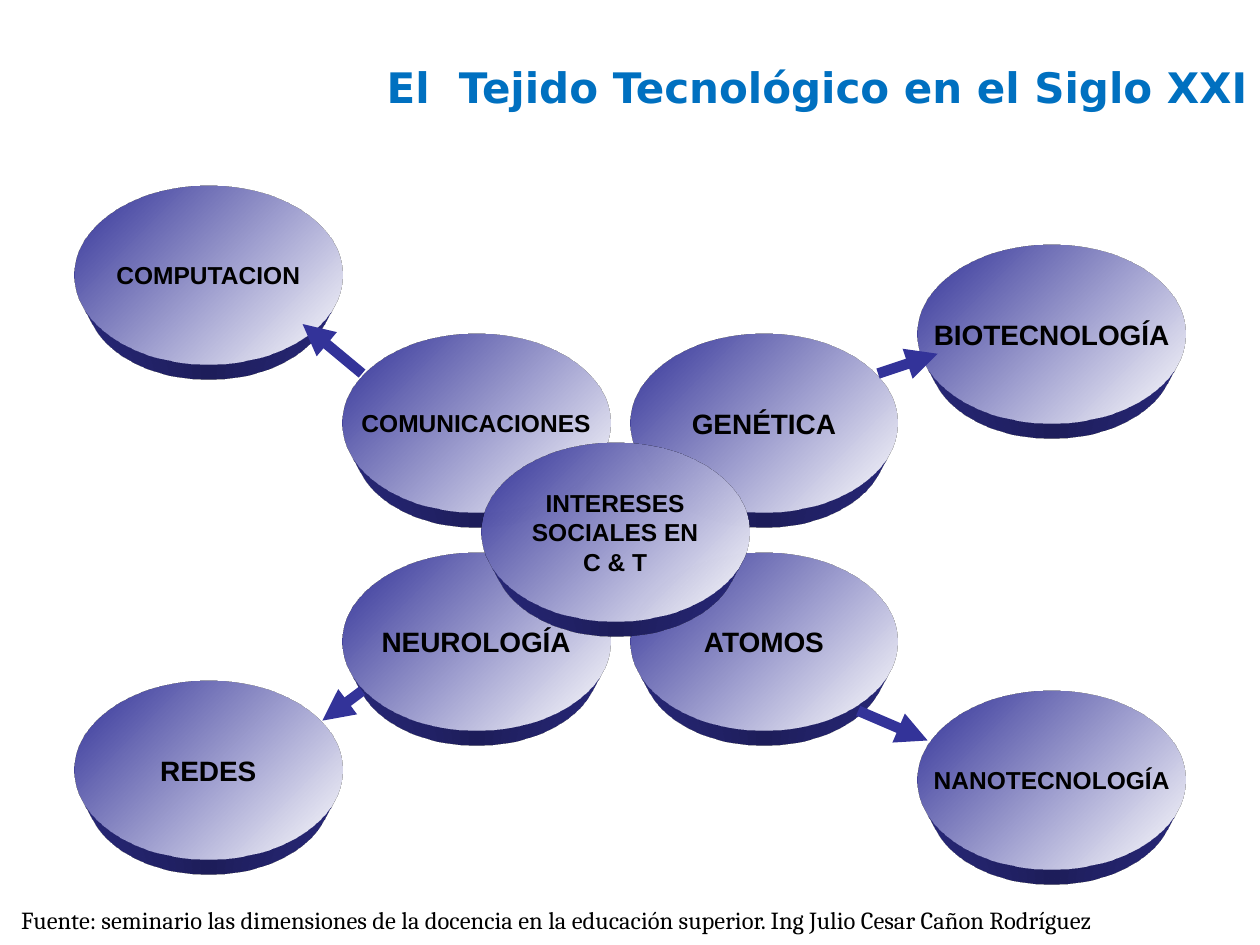
from lxml import etree
from pptx import Presentation
from pptx.dml.color import RGBColor
from pptx.enum.shapes import MSO_CONNECTOR, MSO_SHAPE
from pptx.enum.text import MSO_ANCHOR, PP_ALIGN
from pptx.oxml import parse_xml
from pptx.oxml.ns import nsdecls, qn
from pptx.util import Inches, Pt

INDIGO, WHITE, BLACK, BLUE = "333399", "FFFFFF", "000000", "0070C0"
COLUMNS, ROWS = 112, 69          # grid of the diagram
NODE_COLUMNS, NODE_ROWS = 27, 18  # size of one ellipse

# column, row, font size, lines; from back to front
NODES = [
    (27, 37, 16, ["NEUROLOGÍA"]),
    (56, 37, 16, ["ATOMOS"]),
    (27, 15, 14, ["COMUNICACIONES"]),
    (56, 15, 16, ["GENÉTICA"]),
    (41, 26, 14, ["INTERESES", "SOCIALES EN", "C & T"]),
    (0, 50, 16, ["REDES"]),
    (85, 51, 14, ["NANOTECNOLOGÍA"]),
    (0, 0, 14, ["COMPUTACION"]),
    (85, 6, 16, ["BIOTECNOLOGÍA"]),
]
# start column and row, end column and row
ARROWS = [(81, 19, 87, 17), (29, 19, 23, 14), (29, 51, 25, 54), (79, 53, 86, 56)]

SCENE = f"""<a:scene3d {nsdecls('a')}>
  <a:camera prst="legacyPerspectiveBottom"/><a:lightRig rig="legacyFlat3" dir="t"/>
</a:scene3d>"""
EXTRUSION = f"""<a:sp3d {nsdecls('a')} extrusionH="887400" prstMaterial="legacyMatte">
  <a:bevelT w="13500" h="13500" prst="angle"/><a:bevelB w="13500" h="13500" prst="angle"/>
  <a:extrusionClr><a:srgbClr val="{INDIGO}"/></a:extrusionClr>
</a:sp3d>"""


def color(value):
    return RGBColor.from_string(value)


def write(text_frame, lines, font_name, size, ink, bold=False, align=PP_ALIGN.LEFT):
    for index, line in enumerate(lines):
        paragraph = text_frame.paragraphs[0] if index == 0 else text_frame.add_paragraph()
        paragraph.text = line
        paragraph.alignment = align
        font = paragraph.font
        font.name, font.size, font.bold = font_name, Pt(size), bold
        font.color.rgb = color(ink)


def add_node(slide, left, top, width, height, size, lines):
    """Add an extruded ellipse with its label."""
    shape = slide.shapes.add_shape(MSO_SHAPE.OVAL, left, top, width, height)
    shape.shadow.inherit = False
    shape.line.fill.background()
    shape.fill.gradient()
    shape.fill.gradient_angle = 315
    for stop, position, value in zip(shape.fill.gradient_stops, (0, 1), (INDIGO, WHITE)):
        stop.position = position
        stop.color.rgb = color(value)
    for block in (SCENE, EXTRUSION):
        shape._element.spPr.append(parse_xml(block))
    text_frame = shape.text_frame
    text_frame.word_wrap = False
    text_frame.vertical_anchor = MSO_ANCHOR.MIDDLE
    write(text_frame, lines, "Arial", size, BLACK, True, PP_ALIGN.CENTER)


def add_arrow(slide, *ends):
    arrow = slide.shapes.add_connector(MSO_CONNECTOR.STRAIGHT, *ends)
    arrow.line.color.rgb = color(INDIGO)
    arrow.line.width = Pt(6)
    etree.SubElement(arrow.line._get_or_add_ln(), qn("a:tailEnd"), type="triangle")
    etree.SubElement(arrow._element.spPr, qn("a:effectLst"))


def add_diagram(slide, left, top, width, height):
    def x(column):
        return left + round(width * column / COLUMNS)

    def y(row):
        return top + round(height * row / ROWS)

    node_width = round(width * NODE_COLUMNS / COLUMNS)
    node_height = round(height * NODE_ROWS / ROWS)
    for column, row, size, lines in NODES:
        add_node(slide, x(column), y(row), node_width, node_height, size, lines)
    for start_column, start_row, end_column, end_row in ARROWS:
        add_arrow(slide, x(start_column), y(start_row), x(end_column), y(end_row))


def add_text(slide, box, text, *style):
    text_frame = slide.shapes.add_textbox(*box).text_frame
    text_frame.word_wrap = True
    write(text_frame, [text], *style)


def main():
    presentation = Presentation()
    presentation.slide_width, presentation.slide_height = Inches(10), Inches(7.5)
    slide = presentation.slides.add_slide(presentation.slide_layouts[6])

    def box(*lengths):
        return [Inches(length) for length in lengths]

    add_diagram(slide, *box(0.59, 1.47, 8.82, 5.43))
    add_text(slide, box(0.07, 7.13, 9.21, 0.34),
             "Fuente: seminario las dimensiones de la docencia en la educación superior. "
             "Ing Julio Cesar Cañon Rodríguez", "Cambria", 14, BLACK)
    add_text(slide, box(2.72, 0.44, 7.28, 0.5), "El  Tejido Tecnológico en el Siglo XXI",
             "DejaVu Sans", 24, BLUE, True, PP_ALIGN.RIGHT)
    presentation.save("out.pptx")


if __name__ == "__main__":
    main()
